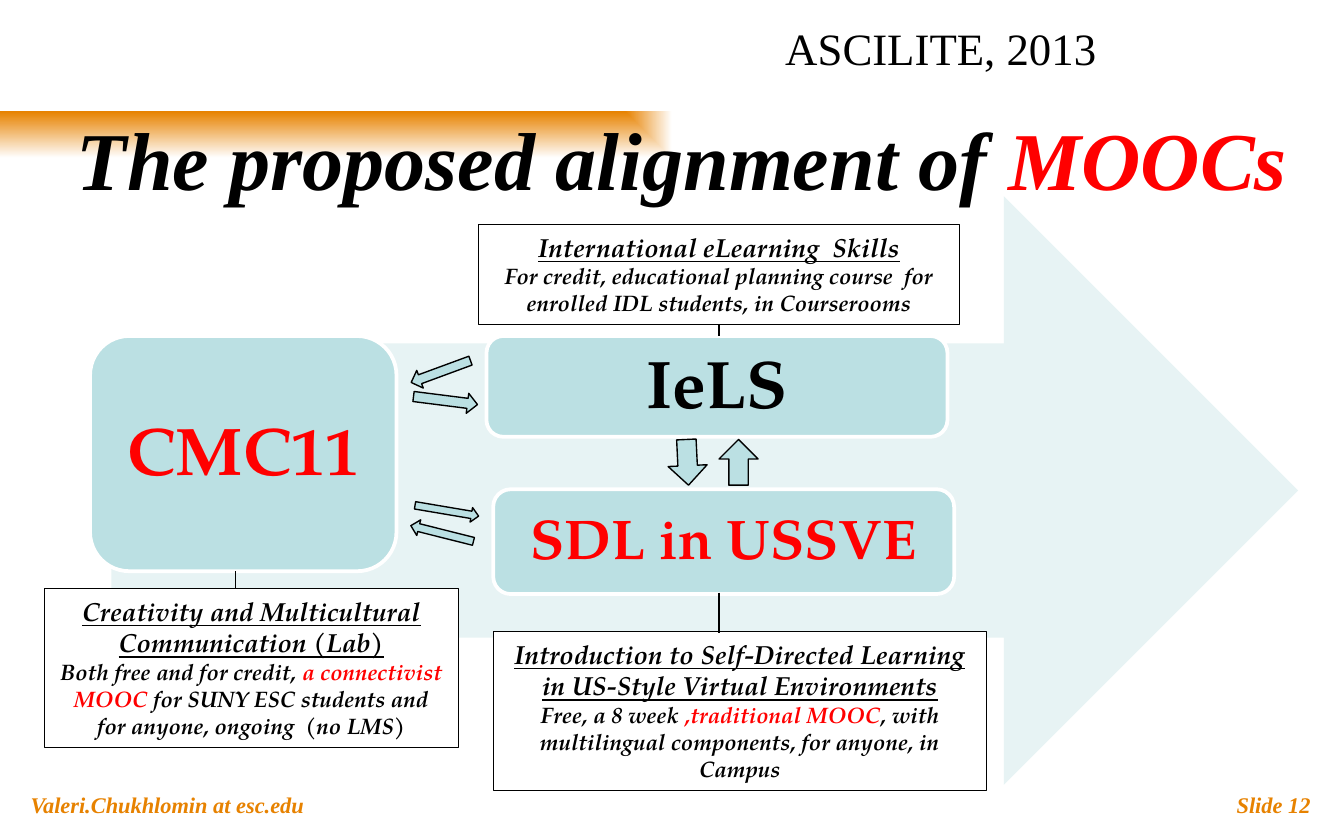
from lxml import etree
from pptx import Presentation
from pptx.dml.color import RGBColor
from pptx.enum.shapes import MSO_CONNECTOR, MSO_SHAPE
from pptx.enum.text import MSO_ANCHOR, PP_ALIGN
from pptx.oxml.ns import qn
from pptx.util import Inches, Pt

RECT = MSO_SHAPE.RECTANGLE
ROUNDED = MSO_SHAPE.ROUNDED_RECTANGLE
RIGHT_ARROW = MSO_SHAPE.RIGHT_ARROW
DOWN_ARROW = MSO_SHAPE.DOWN_ARROW
STRAIGHT = MSO_CONNECTOR.STRAIGHT
LEFT, CENTER, RIGHT = PP_ALIGN.LEFT, PP_ALIGN.CENTER, PP_ALIGN.RIGHT
TOP, MIDDLE = MSO_ANCHOR.TOP, MSO_ANCHOR.MIDDLE

SERIF, PAGELLA = "Times New Roman", "TeX Gyre Pagella"
BLACK, WHITE, RED = "000000", "FFFFFF", "FF0000"
ORANGE, TEAL, PALE_TEAL = "E78200", "BBE0E3", "E7F3F4"

CONFERENCE = "ASCILITE, 2013"
TITLE = [("The proposed alignment of ", BLACK), ("MOOCs", RED)]
FOOTER = [("Valeri.Chukhlomin at esc.edu", LEFT), ("Slide 12", RIGHT)]

COURSES = [
    ("CMC11", (0.67, 2.5, 2.28, 1.75), 36, RED),
    ("IeLS", (3.62, 2.5, 3.43, 0.75), 36, BLACK),
    ("SDL in USSVE", (3.67, 3.64, 3.43, 0.78), 30, RED),
]

NOTES = [
    ((3.56, 1.67, 3.58, 0.74), "International eLearning  Skills",
     [("For credit, educational planning course  for enrolled IDL students, in Courserooms", BLACK)]),
    ((3.67, 4.7, 3.67, 1.18), "Introduction to Self-Directed Learning in US-Style Virtual Environments",
     [("Free, a 8 week ", BLACK), (",traditional MOOC", RED),
      (", with multilingual components, for anyone, in Campus", BLACK)]),
    ((0.33, 4.38, 3.08, 1.18), "Creativity and Multicultural Communication (Lab)",
     [("Both free and for credit, ", BLACK), ("a connectivist MOOC", RED),
      (" for SUNY ESC students and for anyone, ongoing  (no LMS)", BLACK)]),
]

EXCHANGE_ARROWS = [
    ((3.21, 2.53, 0.14, 0.47), 69.8),
    ((3.24, 2.74, 0.15, 0.48), 277.2),
    ((3.27, 3.56, 0.11, 0.48), 279.6),
    ((3.23, 3.73, 0.12, 0.48), 104.1),
    ((4.97, 3.27, 0.29, 0.34), 357.3),
    ((5.35, 3.27, 0.29, 0.34), 180),
]

NOTE_LINKS = [(5.35, 2.41, 2.5), (5.35, 4.41, 4.71), (1.75, 4.25, 4.38)]


def rgb(color):
    return RGBColor.from_string(color)


def add_box(slide, kind, place, fill, line=None, width=0.75):
    box = slide.shapes.add_shape(kind, *map(Inches, place))
    box.shadow.inherit = False
    box.fill.solid()
    box.fill.fore_color.rgb = rgb(fill)
    if line:
        box.line.color.rgb = rgb(line)
        box.line.width = Pt(width)
    else:
        box.line.fill.background()
    return box


def add_text(box, runs, size, font=SERIF, bold=True, italic=True, underline=False,
             align=CENTER, anchor=TOP, spacing=None, insets=(0.1, 0.05, 0.1, 0.05), new=False):
    frame = box.text_frame
    frame.word_wrap = True
    frame.vertical_anchor = anchor
    (frame.margin_left, frame.margin_top,
     frame.margin_right, frame.margin_bottom) = map(Inches, insets)
    paragraph = frame.add_paragraph() if new else frame.paragraphs[0]
    paragraph.alignment = align
    if spacing:
        paragraph.line_spacing = spacing
    for words, color in runs:
        run = paragraph.add_run()
        run.text = words
        run.font.name, run.font.size = font, Pt(size)
        run.font.bold, run.font.italic, run.font.underline = bold, italic, underline
        run.font.color.rgb = rgb(color)


def fade_from_corner(box, start, end):
    box.fill.gradient()
    for stop, color, position in zip(box.fill.gradient_stops, (start, end), (0, 1)):
        stop.color.rgb = rgb(color)
        stop.position = position
    gradient = box._element.spPr.find(qn("a:gradFill"))
    gradient.remove(gradient.find(qn("a:lin")))
    path = etree.SubElement(gradient, qn("a:path"), path="rect")
    etree.SubElement(path, qn("a:fillToRect"), r="100000", b="100000")


def add_link(slide, x, top, bottom):
    link = slide.shapes.add_connector(STRAIGHT, *map(Inches, (x, top, x, bottom)))
    link.line.color.rgb = rgb(BLACK)
    link.line.width = Pt(0.75)
    etree.SubElement(link._element.spPr, qn("a:effectLst"))


def main():
    deck = Presentation()
    deck.slide_width, deck.slide_height = Inches(10), Inches(6.25)
    slide = deck.slides.add_slide(deck.slide_layouts[6])

    conference = slide.shapes.add_textbox(*map(Inches, (4.25, 0.18, 5.5, 0.42)))
    add_text(conference, [(CONFERENCE, BLACK)], 24, bold=False, italic=False, spacing=0.8)

    title_bar = add_box(slide, RECT, (0, 0.83, 10, 0.69), WHITE)
    fade_from_corner(title_bar, ORANGE, WHITE)
    add_text(title_bar, TITLE, 44, anchor=MIDDLE, insets=(0.25, 0.05, 0.1, 0.05))

    for words, align in FOOTER:
        left = 0.13 if align == LEFT else 4.85
        footer = slide.shapes.add_textbox(*map(Inches, (left, 5.84, 5, 0.3)))
        add_text(footer, [(words, ORANGE)], 12, align=align)

    add_box(slide, RIGHT_ARROW, (0.83, 1.46, 8.83, 4.38), PALE_TEAL)

    for name, place, size, color in COURSES:
        course = add_box(slide, ROUNDED, place, TEAL, WHITE, 2)
        add_text(course, [(name, color)], size, font=PAGELLA, italic=False,
                 anchor=MIDDLE, spacing=0.9, insets=(0.15,) * 4)

    for place, heading, details in NOTES:
        note = add_box(slide, RECT, place, WHITE, BLACK, 0.25)
        add_text(note, [(heading, BLACK)], 14, font=PAGELLA, underline=True)
        add_text(note, details, 12, font=PAGELLA, new=True)

    for place, angle in EXCHANGE_ARROWS:
        add_box(slide, DOWN_ARROW, place, TEAL, BLACK).rotation = angle

    for link in NOTE_LINKS:
        add_link(slide, *link)

    deck.save("out.pptx")


if __name__ == "__main__":
    main()
